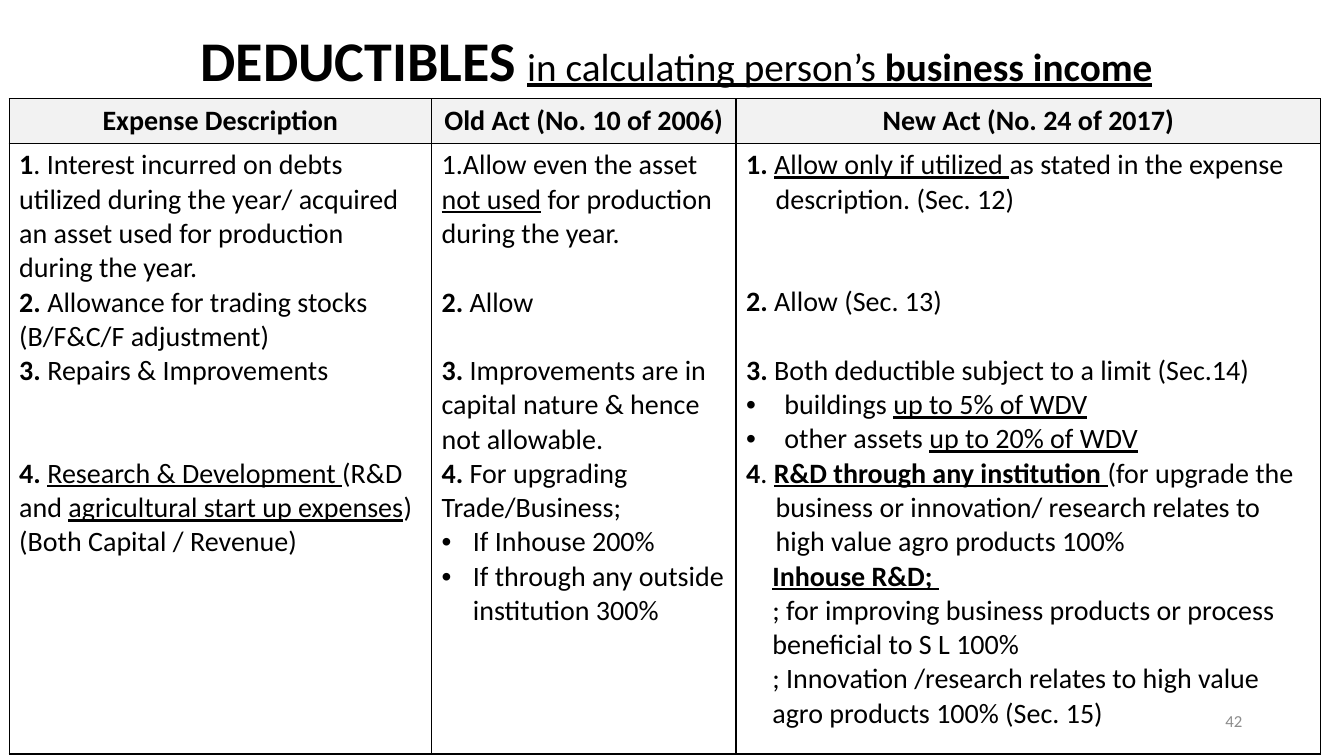
from dataclasses import dataclass
from typing import NamedTuple

from lxml import etree
from pptx import Presentation
from pptx import util as u
from pptx.dml.color import RGBColor
from pptx.enum import text
from pptx.oxml import ns

COLORS = {"ink": "000000", "header": "F2F2F2", "number": "8C8C8C"}
FONT = "Calibri"
BODY_SIZE = 20
LINE = 1.22 * BODY_SIZE  # height of one line of body text, in points
WIDTH, HEIGHT = u.Inches(13.33), u.Inches(7.5)


class Run(NamedTuple):
    words: str
    bold: bool = False
    underline: bool = False
    size: int = BODY_SIZE
    color: str = "ink"


@dataclass
class Item:
    runs: list[Run]
    left: float = 0  # percent of slide width
    hanging: bool = False
    marker: str = ""
    lines_before: int = 0


def across(percent: float) -> int:
    return round(WIDTH * percent / 100)


def down(percent: float) -> int:
    return round(HEIGHT * percent / 100)


def bold(words: str) -> Run:
    return Run(words, bold=True)


def under(words: str) -> Run:
    return Run(words, underline=True)


def strong(words: str) -> Run:
    return Run(words, bold=True, underline=True)


def bullet(*runs: Run, left: float = 2.33) -> Item:
    return Item(list(runs), left, hanging=True, marker="•")


def add_runs(paragraph, runs: list[Run]) -> None:
    for part in runs:
        run = paragraph.add_run()
        run.text = part.words
        font = run.font
        font.name, font.size = FONT, u.Pt(part.size)
        font.bold, font.underline = part.bold, part.underline
        font.color.rgb = RGBColor.from_string(COLORS[part.color])


def add_item(paragraph, item: Item) -> None:
    properties = paragraph._p.get_or_add_pPr()
    indent = across(item.left)
    properties.set("marL", str(indent))
    properties.set("indent", str(-indent if item.hanging else 0))
    if item.marker == "•":
        etree.SubElement(properties, ns.qn("a:buFont")).set("typeface", "Arial")
        etree.SubElement(properties, ns.qn("a:buChar")).set("char", item.marker)
    elif item.marker:
        etree.SubElement(properties, ns.qn("a:buAutoNum")).set("type", item.marker)
    if item.lines_before:
        paragraph.space_before = u.Pt(item.lines_before * LINE)
    add_runs(paragraph, item.runs)


def add_borders(cell) -> None:
    properties = cell._tc.get_or_add_tcPr()
    for place, side in enumerate("LRTB"):
        line = etree.Element(ns.qn(f"a:ln{side}"), w=str(u.Pt(1)))
        fill = etree.SubElement(line, ns.qn("a:solidFill"))
        etree.SubElement(fill, ns.qn("a:srgbClr"), val=COLORS["ink"])
        properties.insert(place, line)


# Content: one heading and one list of items per column
@dataclass
class Column:
    heading: str
    width: float  # percent of slide width
    items: list[Item]


COLUMNS = [
    Column("Expense Description", 31.43, [
        Item([bold("1"), Run(". Interest incurred on debts utilized during the year/ "
                             "acquired an asset used for production during the year.")]),
        Item([bold("2. "), Run("Allowance for trading stocks (B/F&C/F adjustment)")]),
        Item([bold("3. "), Run("Repairs & Improvements")]),
        Item([bold("4. "), under("Research & Development "), Run("(R&D and "),
              under("agricultural start up expenses"), Run(") (Both Capital / Revenue)")],
             lines_before=2),
    ]),
    Column("Old Act (No. 10 of 2006)", 22.66, [
        Item([Run("Allow even the asset "), under("not used"),
              Run(" for production during the year.")], marker="arabicPeriod"),
        Item([bold("2. "), Run("Allow")], lines_before=1),
        Item([bold("3. "), Run("Improvements are in capital nature & hence not allowable.")],
             lines_before=1),
        Item([bold("4. "), Run("For upgrading Trade/Business;")]),
        bullet(Run("If Inhouse 200%")),
        bullet(Run("If through any outside institution 300%")),
    ]),
    Column("New Act (No. 24 of 2017)", 43.51, [
        Item([bold("1. "), under("Allow only if utilized "),
              Run("as stated in the expense description. (Sec. 12)")], 2.2, hanging=True),
        Item([bold("2. "), Run("Allow (Sec. 13)")], lines_before=2),
        Item([bold("3. "), Run("Both deductible subject to a limit (Sec.14)")],
             lines_before=1),
        bullet(Run("buildings "), under("up to 5% of WDV"), left=2.85),
        bullet(Run("other assets "), under("up to 20% of WDV"), left=2.85),
        Item([bold("4"), Run(". "), strong("R&D through any institution"), under(" "),
              Run("(for upgrade the business or innovation/ research relates to "
                  "high value agro products 100%")], 2.2, hanging=True),
        Item([strong("Inhouse R&D;"), under(" ")], 1.95),
        Item([Run("; for improving business products or process beneficial to S L 100%")],
             1.95),
        Item([Run("; Innovation /research relates to high value agro products 100% "
                  "(Sec. 15)")], 1.95),
    ]),
]
ROW_HEIGHTS = [5.8, 80.8]  # percent of slide height


def add_title(slide) -> None:
    title = slide.shapes.title
    title.left, title.top = across(2.4), down(2.67)
    title.width, title.height = across(95.87), down(10.27)
    frame = title.text_frame
    frame.auto_size, frame.word_wrap = text.MSO_AUTO_SIZE.NONE, True
    frame.vertical_anchor = text.MSO_ANCHOR.TOP
    heading = frame.paragraphs[0]
    heading.alignment = text.PP_ALIGN.CENTER
    add_runs(heading, [
        Run("DEDUCTIBLES", bold=True, size=40),
        Run(" ", size=36),
        Run("in calculating person’s ", underline=True, size=28),
        Run("business income", bold=True, underline=True, size=28),
    ])


def add_comparison(slide) -> None:
    comparison = slide.shapes.add_table(
        len(ROW_HEIGHTS), len(COLUMNS), across(0.68), down(13.07),
        across(sum(column.width for column in COLUMNS)), down(sum(ROW_HEIGHTS))).table
    comparison.first_row = comparison.horz_banding = False
    for row, height in zip(comparison.rows, ROW_HEIGHTS):
        row.height = down(height)
    for index, column in enumerate(COLUMNS):
        comparison.columns[index].width = across(column.width)
        header, body = comparison.cell(0, index), comparison.cell(1, index)
        header.fill.solid()
        header.fill.fore_color.rgb = RGBColor.from_string(COLORS["header"])
        body.fill.background()
        add_borders(header)
        add_borders(body)
        heading = header.text_frame.paragraphs[0]
        heading.alignment = text.PP_ALIGN.CENTER
        add_runs(heading, [bold(column.heading)])
        frame = body.text_frame
        for place, item in enumerate(column.items):
            add_item(frame.add_paragraph() if place else frame.paragraphs[0], item)


def add_page_number(slide) -> None:
    box = slide.shapes.add_textbox(across(70.67), down(92.67), across(22.51), down(5.33))
    frame = box.text_frame
    frame.word_wrap = True
    frame.vertical_anchor = text.MSO_ANCHOR.MIDDLE
    frame.paragraphs[0].alignment = text.PP_ALIGN.RIGHT
    add_runs(frame.paragraphs[0], [Run("42", size=12, color="number")])


def main() -> None:
    deck = Presentation()
    deck.slide_width, deck.slide_height = WIDTH, HEIGHT
    slide = deck.slides.add_slide(deck.slide_layouts.get_by_name("Title Only"))
    add_title(slide)
    add_comparison(slide)
    add_page_number(slide)
    deck.save("out.pptx")


if __name__ == "__main__":
    main()
